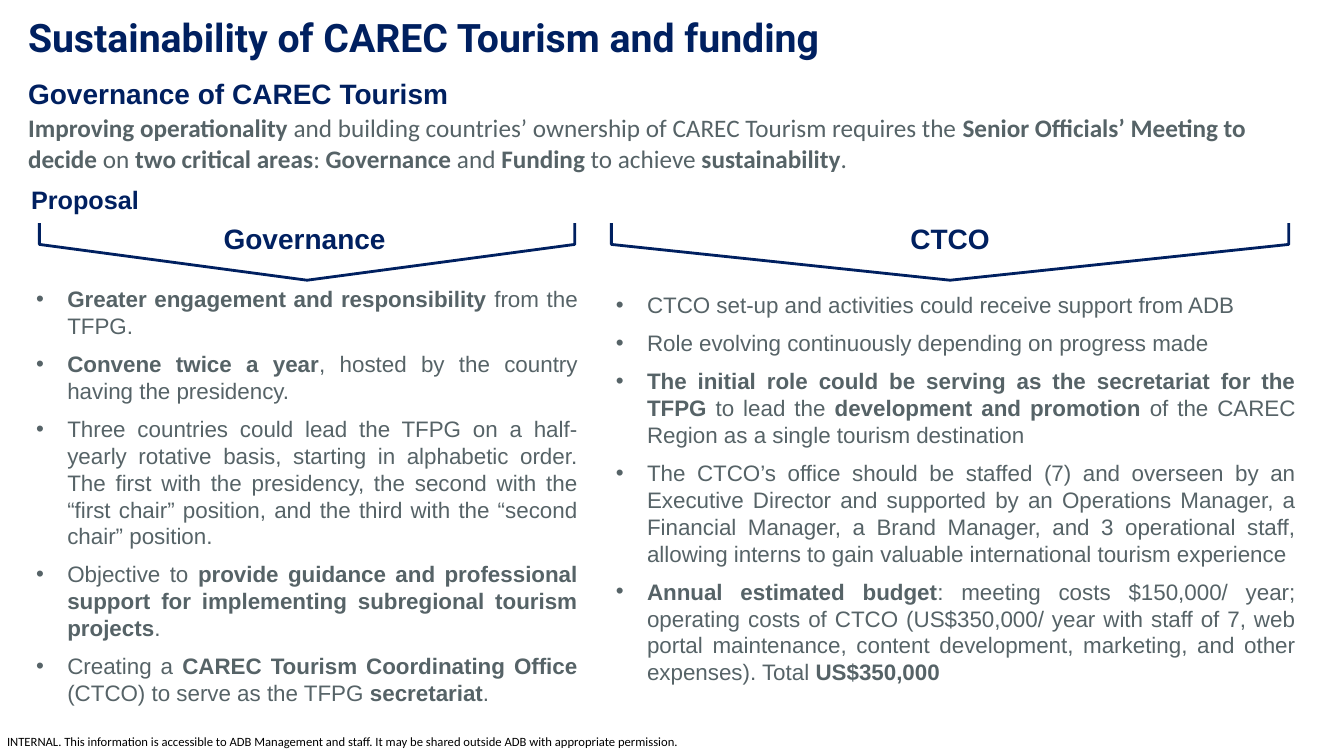
from lxml.etree import SubElement
from pptx import Presentation
from pptx.dml.color import RGBColor as Rgb
from pptx.enum.shapes import MSO_SHAPE as Preset
from pptx.enum.text import MSO_AUTO_SIZE as AutoSize, PP_ALIGN as Align
from pptx.oxml.ns import qn
from pptx.util import Inches, Pt

THEME = {
    "navy": Rgb.from_string("002060"),
    "grey": Rgb.from_string("566367"),
    "black": Rgb.from_string("000000"),
    "white": Rgb.from_string("FFFFFF"),
    "title": 28, "heading": 20, "lead": 18, "body": 16, "footer": 9,
    "sans": "Arial", "text": "Calibri", "display": "Roboto",
}

deck = Presentation()
deck.slide_width, deck.slide_height = Inches(13.33), Inches(7.5)
page = deck.slides.add_slide(deck.slide_layouts[6])


def area(left, top, width, height):
    column, row = deck.slide_width / 100, deck.slide_height / 100
    return [round(n) for n in (left * column, top * row, width * column, height * row)]


def write(place, lines, size, font, color, align=Align.LEFT, after=0, bullet=False):
    box = page.shapes.add_textbox(*area(*place))
    frame = box.text_frame
    frame.word_wrap = True
    frame.auto_size = AutoSize.SHAPE_TO_FIT_TEXT
    for number, line in enumerate(lines):
        para = frame.add_paragraph() if number else frame.paragraphs[0]
        para.alignment = align
        if bullet:
            props = para._p.get_or_add_pPr()
            props.set("marL", str(Inches(0.31)))
            props.set("indent", str(-Inches(0.31)))
            SubElement(props, qn("a:buFont"), typeface=THEME["sans"])
            SubElement(props, qn("a:buChar"), char="•")
        para.space_after = Pt(after)
        for part, words in enumerate(line.split("**")):
            if words:
                span = para.add_run()
                span.text = words
                span.font.bold = part % 2 == 1
                span.font.size = Pt(THEME[size])
                span.font.name = THEME[font]
                span.font.color.rgb = THEME[color]
    return frame


footer = write((0.53, 97.07, 50.25, 2), [
    "INTERNAL. This information is accessible to ADB Management and staff. "
    "It may be shared outside ADB with appropriate permission."
], "footer", "text", "black")
footer.margin_left = footer.margin_right = footer.margin_top = footer.margin_bottom = 0
footer.word_wrap = False

write((1.35, 14.27, 96.53, 9.47), [
    "**Improving operationality **and building countries’ ownership of CAREC Tourism "
    "requires the **Senior Officials’ Meeting to decide** on **two critical areas**: "
    "**Governance** and **Funding** to achieve **sustainability**."
], "lead", "text", "grey")
write((1.35, 1.07, 91.28, 7.6), ["**Sustainability of CAREC Tourism and funding**"],
      "title", "display", "navy")
write((1.35, 9.47, 35.55, 5.87), ["**Governance of CAREC Tourism**"],
      "heading", "sans", "navy", after=6)

governance = [
    "**Greater engagement and responsibility **from the TFPG.",
    "**Convene twice a year**, hosted by the country having the presidency.",
    "Three countries could lead the TFPG on a half-yearly rotative basis, starting in "
    "alphabetic order. The first with the presidency, the second with the “first chair” "
    "position, and the third with the “second chair” position.",
    "Objective to **provide guidance and professional support for implementing "
    "subregional tourism projects**.",
    "Creating a **CAREC Tourism Coordinating Office **(CTCO) to serve as the TFPG "
    "**secretariat**.",
]
office = [
    "CTCO set-up and activities could receive support from ADB",
    "Role evolving continuously depending on progress made",
    "**The initial role could be serving as the secretariat for the TFPG** to lead the "
    "**development and promotion **of the CAREC Region as a single tourism destination",
    "The CTCO’s office should be staffed (7) and overseen by an Executive Director and "
    "supported by an Operations Manager, a Financial Manager, a Brand Manager, and 3 "
    "operational staff, allowing interns to gain valuable international tourism experience",
    "**Annual estimated budget**: meeting costs $150,000/ year; operating costs of CTCO "
    "(US$350,000/ year with staff of 7, web portal maintenance, content development, "
    "marketing, and other expenses). Total **US$350,000**",
]
columns = [
    ("Governance", Align.LEFT, 15.9, (2.93, 39.83), (2.18, 41.55),
     (1.95, 37.07, 41.78, 57.6), governance),
    ("CTCO", Align.CENTER, 63.53, (45.49, 50.4), (44.48, 52.59),
     (45.08, 37.87, 52.06, 54), office),
]
for name, align, name_left, (arrow_left, arrow_width), (mask_left, mask_width), place, items in columns:
    left, top, width, height = area(arrow_left, 27.6, arrow_width, 9.47)
    shift = (width - height) // 2
    arrow = page.shapes.add_shape(Preset.PENTAGON, left + shift, top - shift, height, width)
    arrow.rotation = 90
    mask = page.shapes.add_shape(Preset.RECTANGLE, *area(mask_left, 26.53, mask_width, 2.8))
    for shape, line in ((arrow, "navy"), (mask, "white")):
        shape.shadow.inherit = False
        shape.fill.solid()
        shape.fill.fore_color.rgb = THEME["white"]
        shape.line.color.rgb = THEME[line]
        shape.line.width = Pt(2)
    write((name_left, 28.67, 14.33, 5.87), [f"**{name}**"], "heading", "sans", "navy", align)
    write(place, items, "body", "sans", "grey", Align.JUSTIFY, 8, True)

write((1.58, 23.73, 23.25, 5.33), ["**Proposal**"], "lead", "sans", "navy")

deck.save("out.pptx")
